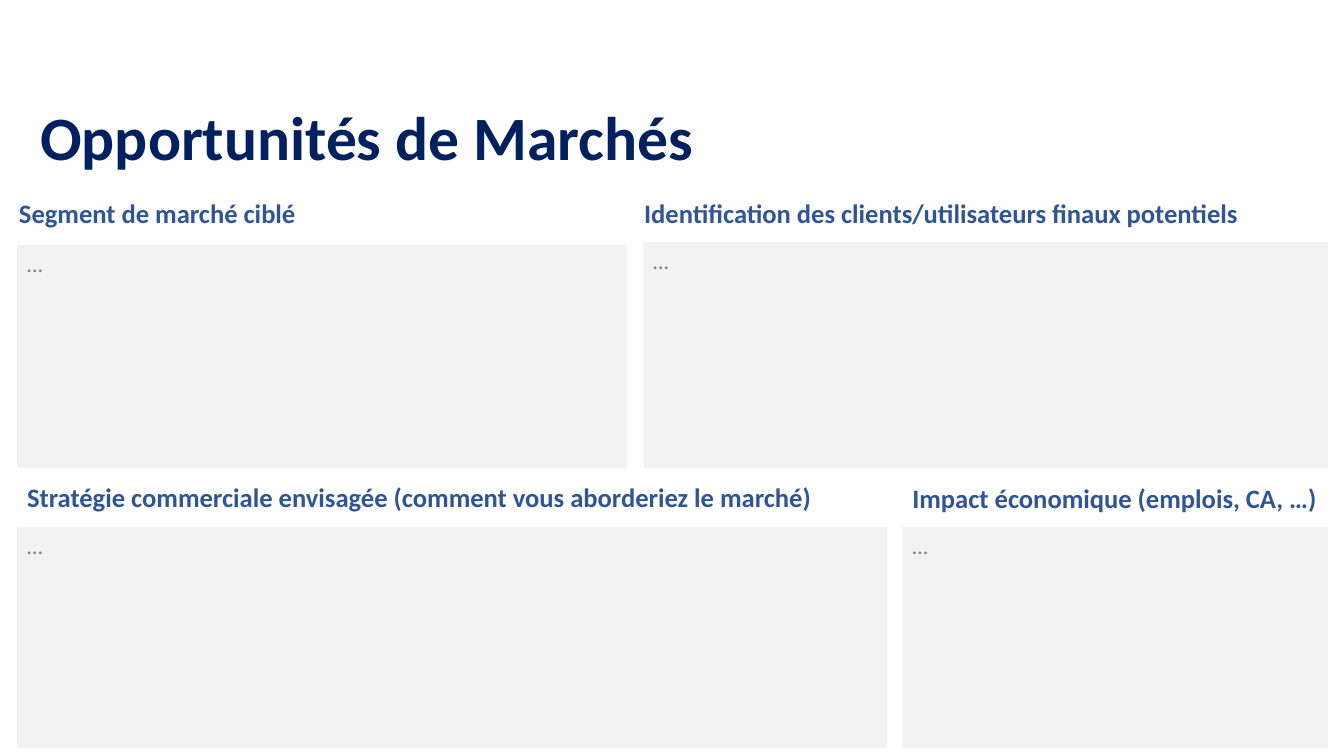
"""Build the market opportunities slide with four labelled answer panels."""
import pptx
import pptx.dml.color
import pptx.enum.shapes
import pptx.enum.text
import pptx.util

EMU_PER_PX = 9144
TITLE_ONLY = 5
FONT = "Calibri"
NAVY, BLUE, GREY, PALE = "002060", "2F5597", "808080", "F2F2F2"

SECTIONS = [
    ("Segment de marché ciblé", (9, 190, 684, 42), (17, 243, 605, 221)),
    ("Identification des clients/utilisateurs finaux potentiels",
     (629, 190, 699, 42), (638, 240, 679, 224)),
    ("Stratégie commerciale envisagée (comment vous aborderiez le marché)",
     (17, 472, 981, 42), (17, 523, 863, 219)),
    ("Impact économique (emplois, CA, …)",
     (895, 473, 449, 42), (895, 523, 422, 219)),
]


def px(length):
    return pptx.util.Emu(length * EMU_PER_PX)


def color(hex_string):
    return pptx.dml.color.RGBColor.from_string(hex_string)


def write(shape, text, size, hex_string, bold, alignment, anchor):
    frame = shape.text_frame
    frame.word_wrap = True
    frame.vertical_anchor = anchor
    paragraph = frame.paragraphs[0]
    paragraph.alignment = alignment
    run = paragraph.add_run()
    run.text = text
    run.font.name = FONT
    run.font.size = pptx.util.Pt(size)
    run.font.bold = bold
    run.font.color.rgb = color(hex_string)
    return paragraph


def add_title(slide, text, box):
    title = slide.shapes.title
    title.left, title.top, title.width, title.height = map(px, box)
    paragraph = write(title, text, 44, NAVY, True,
                      pptx.enum.text.PP_ALIGN.LEFT,
                      pptx.enum.text.MSO_ANCHOR.MIDDLE)
    paragraph.line_spacing = 0.9


def add_heading(slide, text, box):
    heading = slide.shapes.add_textbox(*map(px, box))
    write(heading, text, 19, BLUE, True, pptx.enum.text.PP_ALIGN.LEFT,
          pptx.enum.text.MSO_ANCHOR.TOP)
    heading.text_frame.auto_size = pptx.enum.text.MSO_AUTO_SIZE.SHAPE_TO_FIT_TEXT


def add_panel(slide, box):
    panel = slide.shapes.add_shape(
        pptx.enum.shapes.MSO_SHAPE.RECTANGLE, *map(px, box))
    panel.shadow.inherit = False
    panel.fill.solid()
    panel.fill.fore_color.rgb = color(PALE)
    panel.line.fill.background()
    write(panel, "…", 16, GREY, False, pptx.enum.text.PP_ALIGN.JUSTIFY,
          pptx.enum.text.MSO_ANCHOR.TOP)


def main():
    presentation = pptx.Presentation()
    presentation.slide_width = px(1333)
    presentation.slide_height = px(750)
    slide = presentation.slides.add_slide(presentation.slide_layouts[TITLE_ONLY])
    add_title(slide, "Opportunités de Marchés", (30, 101, 1124, 77))
    for text, heading_box, panel_box in SECTIONS:
        add_panel(slide, panel_box)
        add_heading(slide, text, heading_box)
    presentation.save("out.pptx")


if __name__ == "__main__":
    main()
